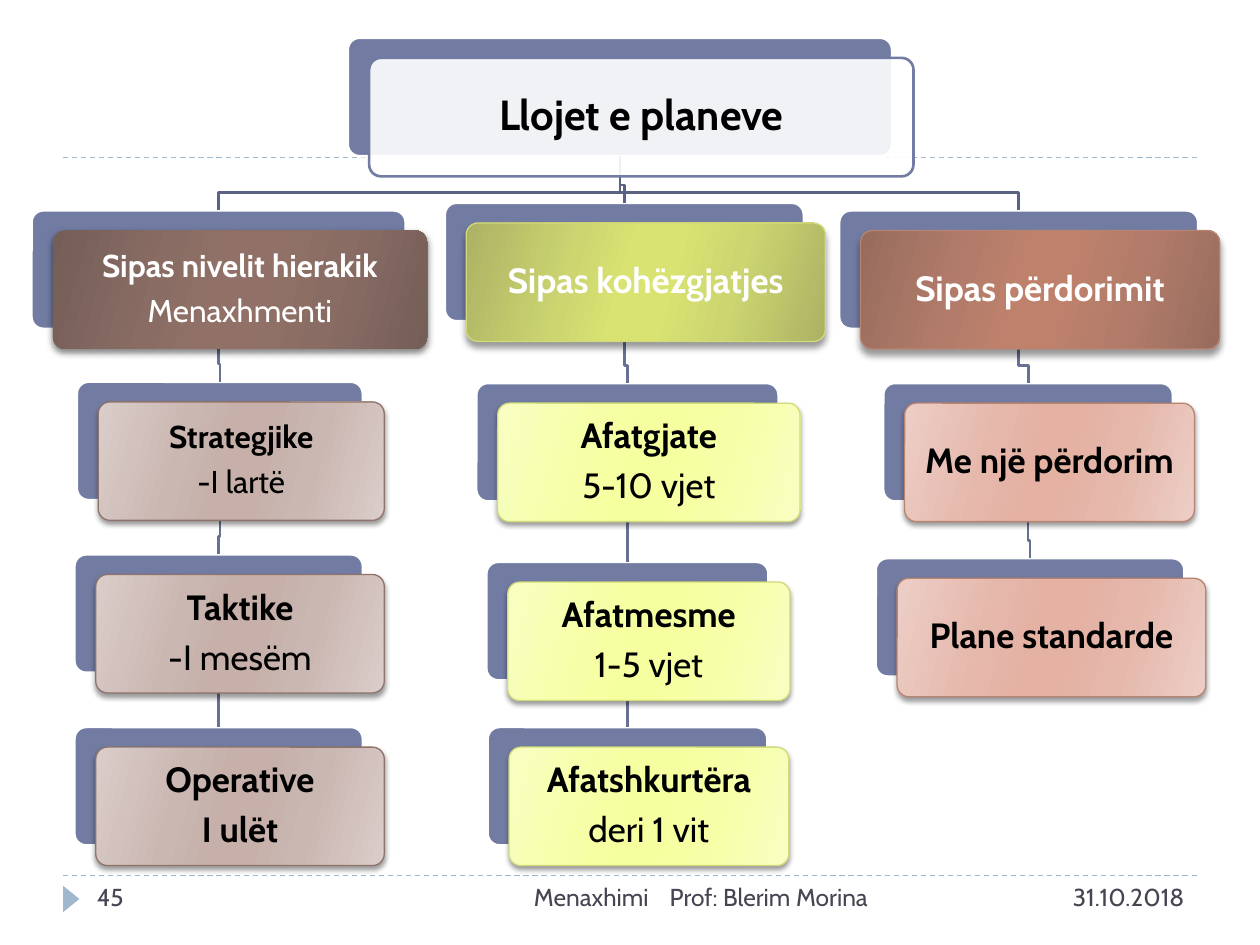
from dataclasses import dataclass
from typing import Optional

from lxml import etree
from pptx import Presentation
from pptx import util as u
from pptx.dml.color import RGBColor
from pptx.enum import dml, shapes, text
from pptx.oxml import ns

PX = 9144
FONT = "Cabin"
CARD_HEIGHT = 94
OFFSET = (17, 16)
BEND = 14
STOPS = (0, 30, 45, 55, 73, 100)

BLACK = RGBColor(0x00, 0x00, 0x00)
WHITE = RGBColor(0xFF, 0xFF, 0xFF)
SLATE = RGBColor(0x72, 0x7C, 0xA3)
LINK_TOP = RGBColor(0x5B, 0x63, 0x83)
LINK_LOW = RGBColor(0x67, 0x71, 0x94)
RULE = RGBColor(0x9F, 0xB8, 0xCD)
FOOTER = RGBColor(0x46, 0x46, 0x53)
BROWN = RGBColor(0x8E, 0x73, 0x6A)
LIME = RGBColor(0xD2, 0xDA, 0x7A)
CLAY = RGBColor(0xB8, 0x84, 0x72)


def shades(*codes):
    """Turn edge, middle and centre codes into a mirrored row of colours."""
    colors = [RGBColor.from_string(code) for code in codes]
    return colors + colors[::-1]


@dataclass
class Look:
    """Colours and shadow of a front card."""
    colors: Optional[list]
    border: Optional[RGBColor]
    ink: RGBColor = BLACK
    shadow: Optional[tuple] = (40, 3, 2)


TITLE = Look(None, SLATE, shadow=None)
BROWN_HEAD = Look(shades("745E57", "896D64", "917167"), None, WHITE, (50, 4, 2))
BROWN_ITEM = Look(shades("DACDCA", "CBB7B2", "C6B0A9"), BROWN)
LIME_HEAD = Look(shades("ACB264", "CCD570", "D9E371"), LIME, WHITE, (40, 4, 3.4))
LIME_ITEM = Look(shades("F8FEC2", "F6FFA7", "F6FF9F"), LIME)
CLAY_HEAD = Look(shades("976C5D", "B37C6A", "BE816C"), CLAY, WHITE, (40, 4, 3.4))
CLAY_ITEM = Look(shades("ECCEC6", "E6B8AC", "E4B1A3"), CLAY)


@dataclass
class Card:
    """Place, look and wording of one node; each line is (words, bold)."""
    left: int
    top: int
    width: int
    look: Look
    size: int
    lines: list


ROOT = Card(276, 30, 432, TITLE, 24, [("Llojet e planeve", True)])
COLUMNS = [
    [Card(25, 167, 297, BROWN_HEAD, 18,
          [("Sipas nivelit hierakik", True), ("Menaxhmenti", False)]),
     Card(61, 303, 227, BROWN_ITEM, 18, [("Strategjike", True), ("-I lartë", False)]),
     Card(59, 440, 229, BROWN_ITEM, 20, [("Taktike", True), ("-I mesëm", False)]),
     Card(59, 577, 229, BROWN_ITEM, 20, [("Operative", True), ("I ulët", True)])],
    [Card(353, 161, 285, LIME_HEAD, 20, [("Sipas kohëzgjatjes", True)]),
     Card(378, 304, 240, LIME_ITEM, 20, [("Afatgjate", True), ("5-10 vjet", False)]),
     Card(386, 446, 224, LIME_ITEM, 20, [("Afatmesme", True), ("1-5 vjet", False)]),
     Card(387, 577, 222, LIME_ITEM, 20, [("Afatshkurtëra", True), ("deri 1 vit", False)])],
    [Card(666, 167, 285, CLAY_HEAD, 20, [("Sipas përdorimit", True)]),
     Card(701, 304, 230, CLAY_ITEM, 20, [("Me një përdorim", True)]),
     Card(695, 443, 245, CLAY_ITEM, 20, [("Plane standarde", True)])],
]


def add_node(parent, tag, **attributes):
    """Append a drawing element with the given attributes."""
    values = {key: str(value) for key, value in attributes.items()}
    return etree.SubElement(parent, ns.qn(tag), values)


def add_span(para, words, size, color, bold=False):
    """Add one run of text."""
    span = para.add_run()
    span.text = words
    span.font.name, span.font.size, span.font.bold = FONT, u.Pt(size), bold
    span.font.color.rgb = color


def add_rounded(page, left, top, width):
    """Add a rounded card shape without theme shadow."""
    box = page.shapes.add_shape(shapes.MSO_SHAPE.ROUNDED_RECTANGLE, left * PX,
                                top * PX, width * PX, CARD_HEIGHT * PX)
    box.adjustments[0] = 0.1
    box.shadow.inherit = False
    return box


def add_back(page, card):
    """Add the plain card that lies behind."""
    box = add_rounded(page, card.left, card.top, card.width)
    box.fill.solid()
    box.fill.fore_color.rgb = SLATE
    box.line.color.rgb, box.line.width = WHITE, u.Pt(1.5)
    return box


def fill_front(box, look):
    """Fill a front card with its gradient, or with translucent white."""
    properties = box._element.spPr
    if look.colors is None:
        box.fill.solid()
        box.fill.fore_color.rgb = WHITE
        add_node(properties.find(".//" + ns.qn("a:srgbClr")), "a:alpha", val=90000)
        return
    box.fill.gradient()
    box.fill.gradient_angle = 344
    stops = properties.find(".//" + ns.qn("a:gsLst"))
    for stop in list(stops):
        stops.remove(stop)
    for position, color in zip(STOPS, look.colors):
        add_node(add_node(stops, "a:gs", pos=position * 1000), "a:srgbClr", val=color)


def add_shadow(box, alpha, blur, distance):
    """Add a black shadow that falls straight down."""
    effects = box._element.spPr.find(ns.qn("a:effectLst"))
    shadow = add_node(effects, "a:outerShdw", blurRad=u.Pt(blur), dist=u.Pt(distance),
                      dir=5400000, algn="ctr", rotWithShape=0)
    add_node(add_node(shadow, "a:srgbClr", val=BLACK), "a:alpha", val=alpha * 1000)


def add_front(page, card):
    """Add the front card with its text."""
    look = card.look
    box = add_rounded(page, card.left + OFFSET[0], card.top + OFFSET[1], card.width)
    fill_front(box, look)
    if look.border is None:
        box.line.fill.background()
    else:
        box.line.color.rgb = look.border
        box.line.width = u.Pt(0.75 if look.colors else 1.5)
    if look.shadow:
        add_shadow(box, *look.shadow)
    frame = box.text_frame
    frame.word_wrap = True
    frame.vertical_anchor = text.MSO_ANCHOR.MIDDLE
    frame.margin_left = frame.margin_right = 10 * PX
    frame.margin_top = frame.margin_bottom = 10 * PX
    for index, (words, bold) in enumerate(card.lines):
        para = frame.add_paragraph() if index else frame.paragraphs[0]
        para.alignment = text.PP_ALIGN.CENTER
        para.line_spacing = 0.9
        para.space_after = u.Pt(card.size * 0.35)
        add_span(para, words, card.size, look.ink, bold)


def add_line(page, start, end, color, width):
    """Add a straight connector without shadow."""
    line = page.shapes.add_connector(shapes.MSO_CONNECTOR.STRAIGHT, *start, *end)
    line.line.color.rgb, line.line.width = color, u.Pt(width)
    add_node(line._element.spPr, "a:effectLst")
    return line


def add_link(page, parent, child, color):
    """Link two back cards, straight when aligned and bent otherwise."""
    start = (parent.left + parent.width // 2, parent.top + parent.height)
    end = (child.left + child.width // 2, child.top)
    if start[0] == end[0]:
        line = add_line(page, start, end, color, 1.5)
        line.begin_connect(parent, 0 + 2)
        line.end_connect(child, 0)
        return
    bend = end[1] - BEND * PX
    builder = page.shapes.build_freeform(*start, scale=1.0)
    builder.add_line_segments([(start[0], bend), (end[0], bend), end], close=False)
    link = builder.convert_to_shape()
    link.fill.background()
    link.line.color.rgb, link.line.width = color, u.Pt(1.5)
    link.shadow.inherit = False


def add_footer(page, left, width, words, align, tabs=()):
    """Add one footer field, with right tab stops if given."""
    box = page.shapes.add_textbox(left * PX, 695 * PX, width * PX, 40 * PX)
    box.text_frame.word_wrap = True
    para = box.text_frame.paragraphs[0]
    para.alignment = align
    if tabs:
        stops = add_node(para._p.get_or_add_pPr(), "a:tabLst")
        for tab in tabs:
            add_node(stops, "a:tab", pos=tab * PX, algn="r")
    add_span(para, words, 14, FOOTER)


def add_frame(page):
    """Add the dashed rules, the marker and the footer fields."""
    for y in (695, 125):
        rule = add_line(page, (50 * PX, y * PX), (950 * PX, y * PX), RULE, 0.75)
        rule.line.dash_style = dml.MSO_LINE.DASH
    marker = page.shapes.add_shape(shapes.MSO_SHAPE.ISOSCELES_TRIANGLE,
                                   46 * PX, 707 * PX, 21 * PX, 13 * PX)
    marker.rotation = 90
    marker.shadow.inherit = False
    marker.fill.solid()
    marker.fill.fore_color.rgb = RULE
    marker.line.fill.background()
    add_footer(page, 700, 250, "31.10.2018", text.PP_ALIGN.RIGHT)
    add_footer(page, 317, 383, "\tMenaxhimi\tProf: Blerim Morina",
               text.PP_ALIGN.LEFT, (188, 362))
    add_footer(page, 67, 217, "45", text.PP_ALIGN.LEFT)


def main():
    """Build the slide with the tree of plan types."""
    deck = Presentation()
    deck.slide_width, deck.slide_height = 1000 * PX, 750 * PX
    page = deck.slides.add_slide(deck.slide_layouts[6])
    add_frame(page)
    root = add_back(page, ROOT)
    for column in COLUMNS:
        backs = [add_back(page, card) for card in column]
        add_link(page, root, backs[0], LINK_TOP)
        for parent, child in zip(backs, backs[1:]):
            add_link(page, parent, child, LINK_LOW)
    for card in [ROOT, *sum(COLUMNS, [])]:
        add_front(page, card)
    deck.save("out.pptx")


if __name__ == "__main__":
    main()
